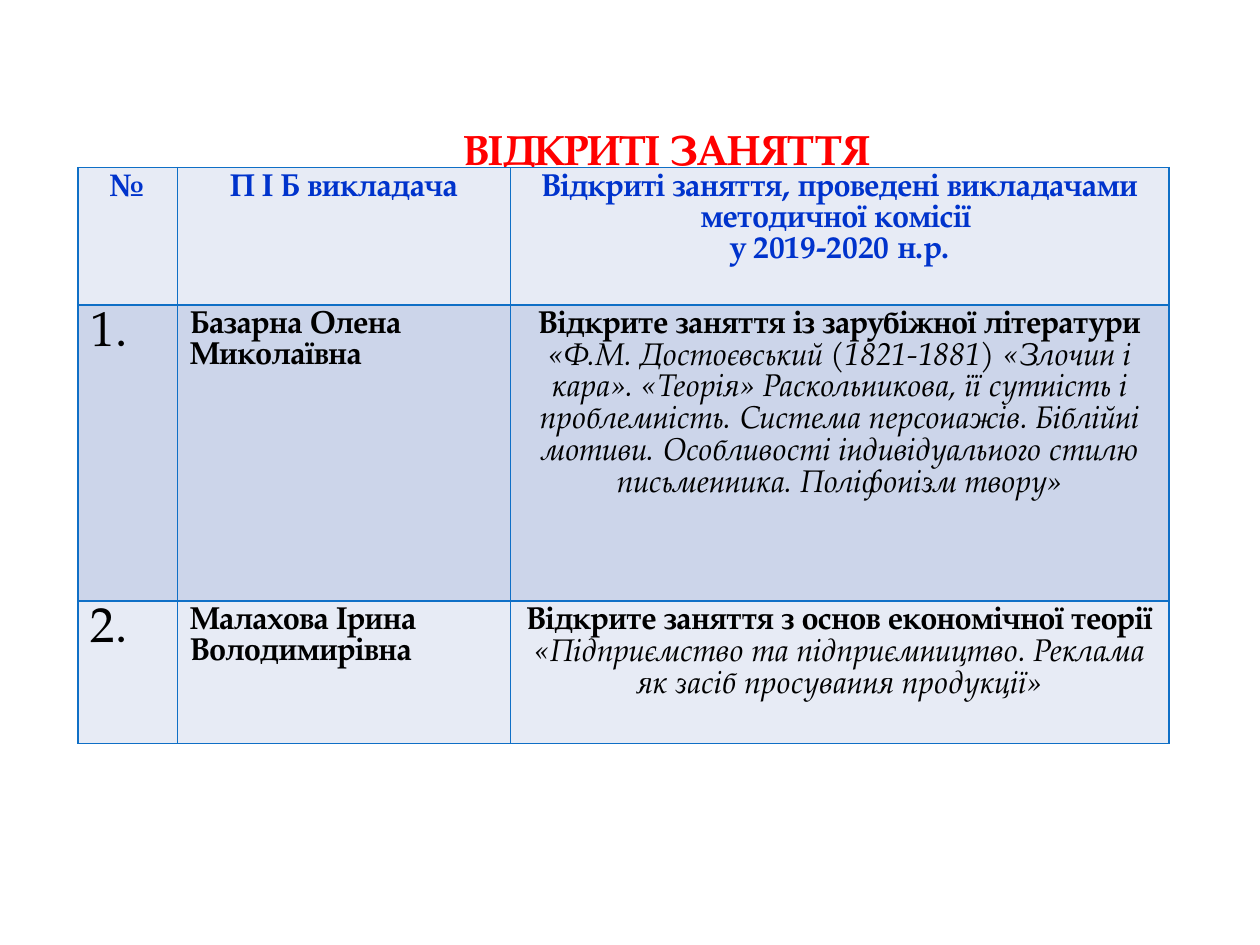
from lxml import etree
from pptx import Presentation
from pptx.dml.color import RGBColor
from pptx.enum.text import PP_ALIGN
from pptx.oxml.ns import qn
from pptx.util import Inches, Pt

CENTER = PP_ALIGN.CENTER
LEFT = PP_ALIGN.LEFT
RED = RGBColor(0xFF, 0x00, 0x00)
BLUE = RGBColor(0x00, 0x33, 0xCC)
BLACK = RGBColor(0x00, 0x00, 0x00)
BORDER = RGBColor(0x0F, 0x6F, 0xC6)
LIGHT = RGBColor(0xE7, 0xEB, 0xF5)
DARK = RGBColor(0xCC, 0xD5, 0xEA)

COLUMN_WIDTHS = [0.79, 2.64, 5.23]
ROW_HEIGHTS = [1.09, 2.35, 1.13]
HEADERS = [
    ["№"],
    ["П І Б викладача"],
    ["Відкриті заняття, проведені викладачами методичної комісії ", "у 2019-2020 н.р."],
]
LESSONS = [
    (
        "1.",
        "Базарна Олена Миколаївна",
        "Відкрите заняття із зарубіжної літератури ",
        "«Ф.М. Достоєвський (1821-1881) «Злочин і кара». «Теорія» Раскольникова, "
        "її сутність і проблемність. Система персонажів. Біблійні мотиви. "
        "Особливості індивідуального стилю письменника. Поліфонізм твору»",
    ),
    (
        "2.",
        "Малахова Ірина Володимирівна",
        "Відкрите заняття з основ економічної теорії ",
        "«Підприємство та підприємництво. Реклама як засіб просування продукції»",
    ),
]


class LessonSlide:
    """Holds the slide and its text style, and adds the title and table."""

    font_name = "TeX Gyre Pagella"

    def __init__(self, presentation):
        self.slide = presentation.slides.add_slide(presentation.slide_layouts[6])

    def style(self, font, size, color, bold=False):
        font.name = self.font_name
        font.size = Pt(size)
        font.color.rgb = color
        font.bold = bold

    def title(self, text, left, top, width, height):
        box = self.slide.shapes.add_textbox(
            Inches(left), Inches(top), Inches(width), Inches(height)
        )
        frame = box.text_frame
        frame.word_wrap = True
        frame.margin_left = Inches(0.59)
        frame.margin_top = Inches(0.36)
        frame.margin_bottom = 0
        paragraph = frame.paragraphs[0]
        paragraph.text = text
        paragraph.alignment = CENTER
        self.style(paragraph.font, 24, RED, bold=True)

    def table(self, left, top, column_widths, row_heights):
        table = self.slide.shapes.add_table(
            len(row_heights), len(column_widths), Inches(left), Inches(top),
            Inches(sum(column_widths)), Inches(sum(row_heights)),
        ).table
        table.first_row = False
        table.horz_banding = False
        for column, width in zip(table.columns, column_widths):
            column.width = Inches(width)
        for index, (row, height) in enumerate(zip(table.rows, row_heights)):
            row.height = Inches(height)
            for cell in row.cells:
                self.borders(cell)
                cell.fill.solid()
                cell.fill.fore_color.rgb = DARK if index % 2 else LIGHT
        return table

    def borders(self, cell):
        properties = cell._tc.get_or_add_tcPr()
        for side in ("a:lnL", "a:lnR", "a:lnT", "a:lnB"):
            line = etree.SubElement(properties, qn(side), w=str(Pt(1)))
            fill = etree.SubElement(line, qn("a:solidFill"))
            etree.SubElement(fill, qn("a:srgbClr"), val=str(BORDER))

    def cell_text(self, cell, lines, size=18, color=BLACK, bold=True, alignment=LEFT):
        cell.text = "\n".join(lines)
        for paragraph in cell.text_frame.paragraphs:
            paragraph.alignment = alignment
            self.style(paragraph.font, size, color, bold)

    def lesson_text(self, cell, heading, topic):
        paragraph = cell.text_frame.paragraphs[0]
        paragraph.alignment = CENTER
        for text, is_topic in ((heading, False), (topic, True)):
            run = paragraph.add_run()
            run.text = text
            self.style(run.font, 18, BLACK, bold=not is_topic)
            run.font.italic = is_topic


def main():
    presentation = Presentation()
    presentation.slide_width = Inches(10)
    presentation.slide_height = Inches(7.5)
    page = LessonSlide(presentation)
    page.title("ВІДКРИТІ ЗАНЯТТЯ", 0.83, 0.62, 8.43, 0.7)
    table = page.table(0.62, 1.33, COLUMN_WIDTHS, ROW_HEIGHTS)
    for column, lines in enumerate(HEADERS):
        page.cell_text(table.cell(0, column), lines, color=BLUE, alignment=CENTER)
    for row, (number, teacher, heading, topic) in enumerate(LESSONS, start=1):
        page.cell_text(table.cell(row, 0), [number], size=28, bold=False)
        page.cell_text(table.cell(row, 1), [teacher])
        page.lesson_text(table.cell(row, 2), heading, topic)
    presentation.save("out.pptx")


if __name__ == "__main__":
    main()
